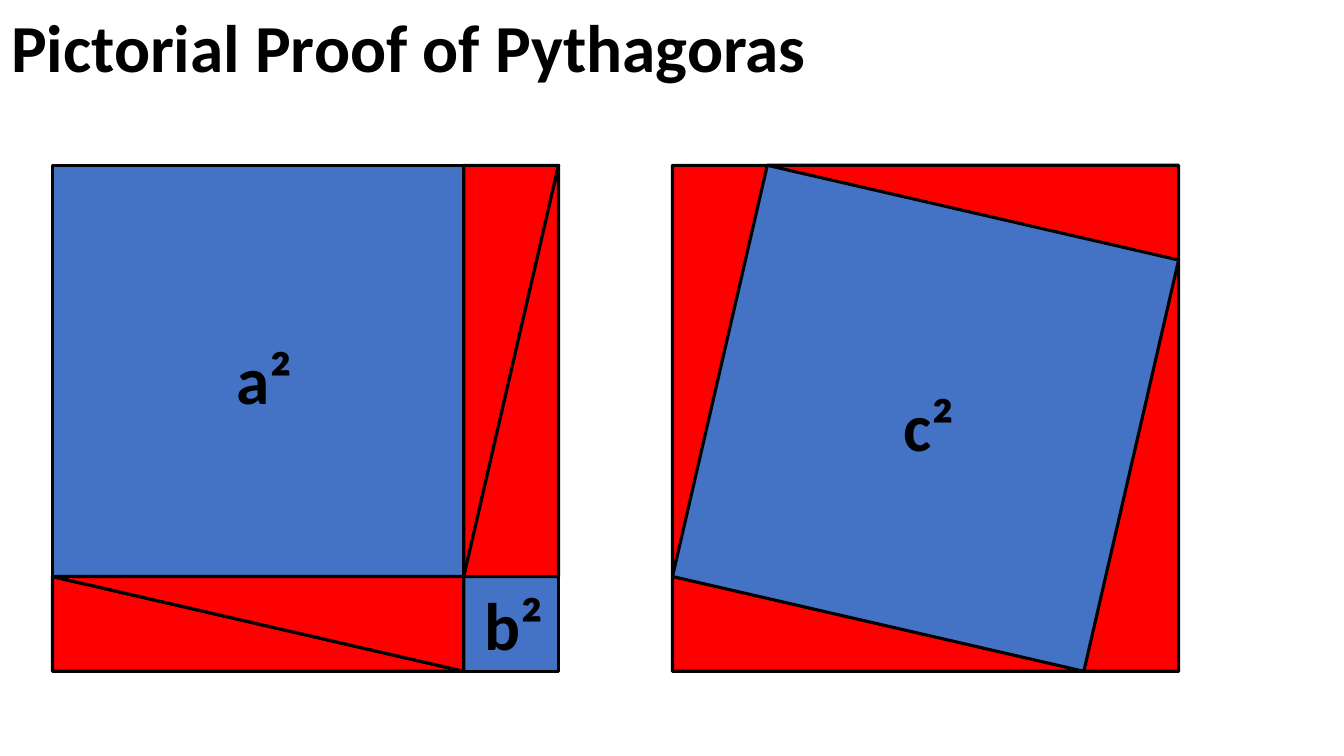
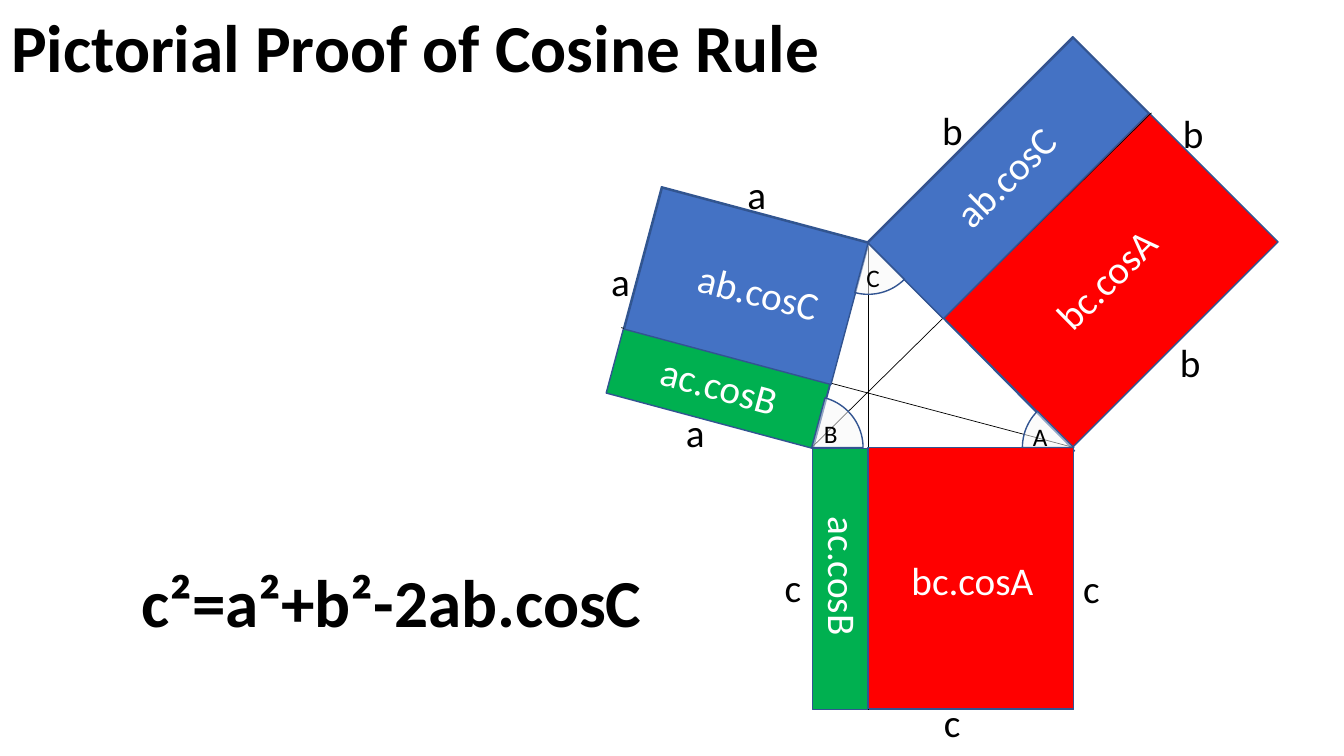
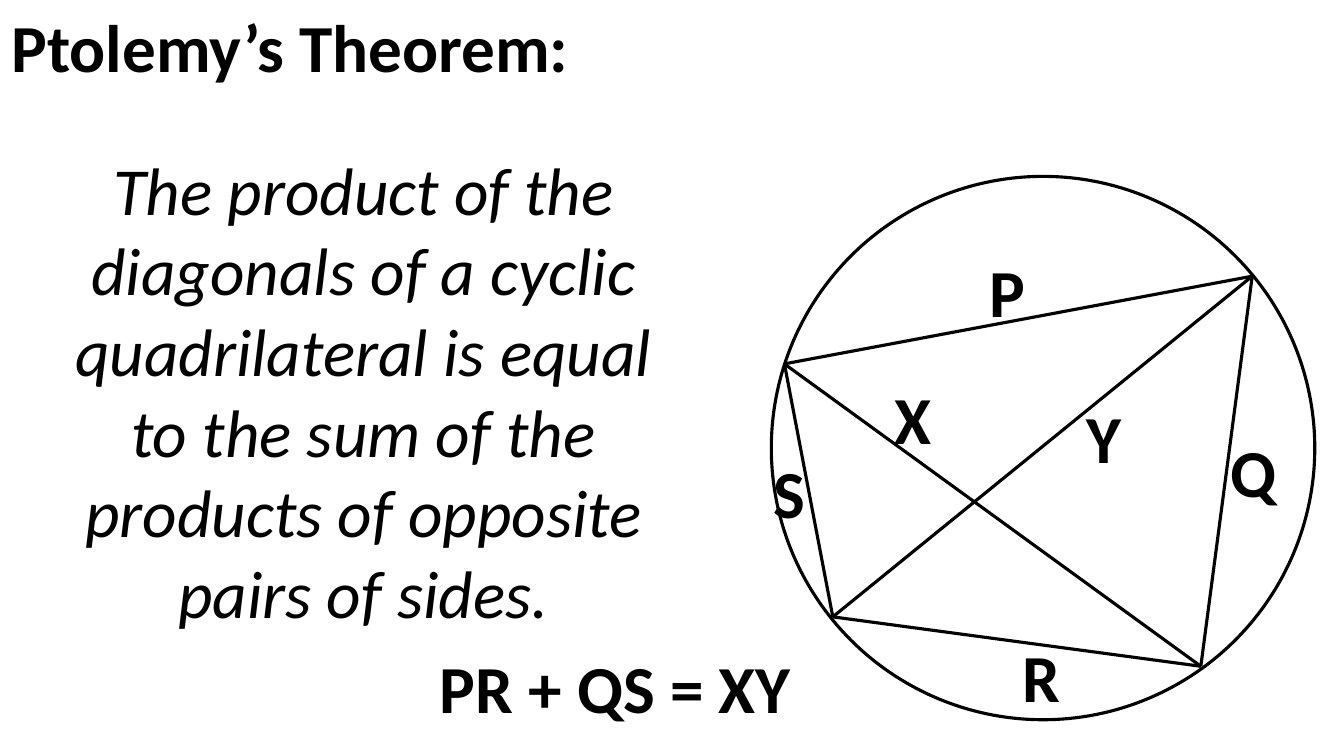
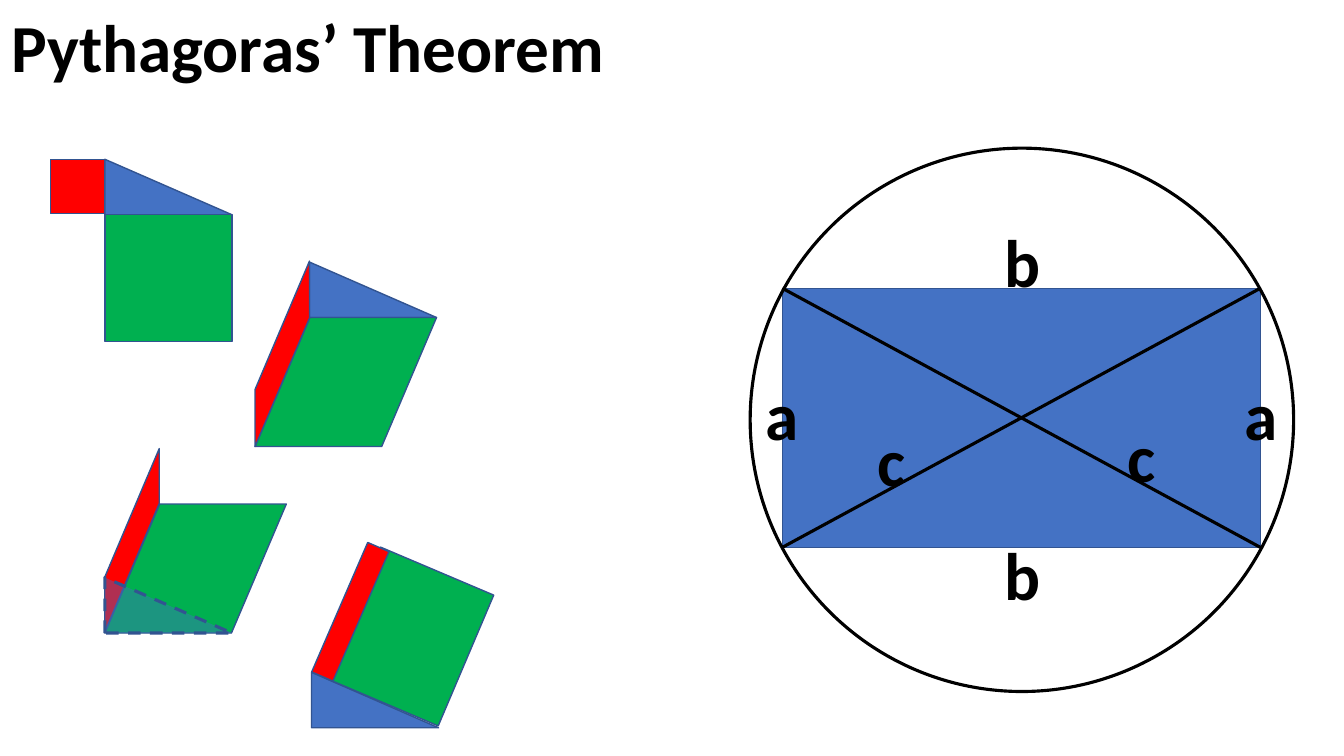
from dataclasses import dataclass
from itertools import combinations

from lxml import etree
from pptx import Presentation
from pptx.dml.color import RGBColor
from pptx.enum import dml, shapes, text
from pptx.oxml.ns import qn
from pptx.util import Inches, Pt

KIND = shapes.MSO_SHAPE


@dataclass(frozen=True)
class Theme:
    font: str = "Calibri"
    black: str = "000000"
    white: str = "FFFFFF"
    blue: str = "4472C4"
    red: str = "FF0000"
    green: str = "00B050"
    outline: str = "325491"
    angle: str = "F8F8F8"
    large: int = 48
    medium: int = 28
    small: int = 18
    thick: float = 2.25
    thin: float = 1
    hairline: float = 0.5


THEME = Theme()
BOX_HEIGHT = {THEME.large: 0.91, THEME.medium: 0.57, THEME.small: 0.4}


def set_attributes(target, values):
    for name, value in values.items():
        setattr(target, name, value)


def set_line(line, color, width):
    line.color.rgb = RGBColor.from_string(color)
    line.width = Pt(width)


def write(shape, content, size, color=THEME.black, bold=False, italic=False,
          align=text.PP_ALIGN.CENTER, wrap=False, fit=text.MSO_AUTO_SIZE.SHAPE_TO_FIT_TEXT):
    frame = shape.text_frame
    set_attributes(frame, {"word_wrap": wrap, "auto_size": fit,
                           "vertical_anchor": text.MSO_ANCHOR.TOP})
    paragraph = frame.paragraphs[0]
    paragraph.alignment = align
    run = paragraph.add_run()
    run.text = content
    set_attributes(run.font, {"name": THEME.font, "size": Pt(size),
                              "bold": bold, "italic": italic})
    run.font.color.rgb = RGBColor.from_string(color)


def add_titled_slide(presentation, title, width):
    slide = presentation.slides.add_slide(presentation.slide_layouts[5])
    set_attributes(slide.shapes.title, {
        "left": Inches(0.01), "top": 0,
        "width": Inches(width), "height": Inches(BOX_HEIGHT[THEME.large])})
    write(slide.shapes.title, title, THEME.large, bold=True,
          align=text.PP_ALIGN.LEFT, fit=text.MSO_AUTO_SIZE.NONE)
    return slide


def add_label(slide, content, left, top, width, size=THEME.large, rotation=0,
              height=None, **style):
    box = slide.shapes.add_textbox(
        Inches(left), Inches(top), Inches(width), Inches(height or BOX_HEIGHT[size]))
    box.rotation = rotation
    write(box, content, size, **style)


def add_figure(container, kind, box, fill=None, line=THEME.outline, width=THEME.thin,
               rotation=0, adjust=(), opacity=None, flip=False):
    """Draw a preset shape on a slide or in a group; box is left, top, width, height."""
    shape = container.shapes.add_shape(kind, *(Inches(value) for value in box))
    shape.shadow.inherit = False
    shape.rotation = rotation
    for index, value in enumerate(adjust):
        shape.adjustments[index] = value
    properties = shape._element.spPr
    if fill:
        shape.fill.solid()
        shape.fill.fore_color.rgb = RGBColor.from_string(fill)
    else:
        shape.fill.background()
    if opacity:
        color = properties.find(qn("a:solidFill"))[0]
        etree.SubElement(color, qn("a:alpha"), val=str(opacity * 1000))
    if flip:
        properties.find(qn("a:xfrm")).set("flipH", "1")
    set_line(shape.line, line, width)
    return shape


def add_segment(slide, start, end, width=THEME.thick):
    connector = slide.shapes.add_connector(
        shapes.MSO_CONNECTOR.STRAIGHT, *(Inches(value) for value in (*start, *end)))
    set_line(connector.line, THEME.black, width)
    etree.SubElement(connector._element.spPr, qn("a:effectLst"))


def add_angle(slide, vertex, start, end):
    """Mark the angle at vertex, with its sides given in degrees clockwise from east."""
    radius = 0.51
    x, y = vertex
    add_figure(slide, KIND.PIE, (x - radius, y - radius, 2 * radius, 2 * radius),
               THEME.angle, adjust=(start * 0.6, end * 0.6), opacity=50)


def build_square_proof(presentation):
    slide = add_titled_slide(presentation, "Pictorial Proof of Pythagoras", 8.17)
    a, b, top = 4.08, 0.94, 1.64
    side = a + b
    far_a, far_b = side - a / 2, side - b / 2
    # Each triangle: centre within the big square, then rotation
    arrangements = {
        0.52: [(a / 2, far_b, 0), (a / 2, far_b, 180), (far_b, a / 2, 90), (far_b, a / 2, 270)],
        6.67: [(a / 2, far_b, 0), (far_a, b / 2, 180), (b / 2, a / 2, 90), (far_b, far_a, 270)],
    }
    outline = {"line": THEME.black, "width": THEME.thick}
    for left, triangles in arrangements.items():
        add_figure(slide, KIND.RECTANGLE, (left, top, side, side), THEME.blue, **outline)
        for x, y, rotation in triangles:
            add_figure(slide, KIND.RIGHT_TRIANGLE, (left + x - a / 2, top + y - b / 2, a, b),
                       THEME.red, rotation=rotation, **outline)
    for label in [("b²", 4.7, 5.74, 0.79), ("a²", 2.23, 3.3, 0.79), ("c²", 8.86, 3.76, 0.71)]:
        add_label(slide, *label, bold=True)


def build_cosine_rule(presentation):
    slide = add_titled_slide(presentation, "Pictorial Proof of Cosine Rule", 8.3)
    corner_a, corner_b, corner_c = (10.65, 4.44), (8.05, 4.44), (8.61, 2.41)
    add_figure(slide, KIND.ISOSCELES_TRIANGLE, (8.49, 2.5, 2.12, 2.51),
               rotation=105, adjust=[0.692])
    squares = [
        ((6.25, 2.09, 2.12, 2.12), THEME.green, 105),
        ((8.06, 4.45, 2.59, 2.59), THEME.green, 0),
        ((9.2, 0.96, 2.88, 2.88), THEME.red, 315),
    ]
    parts = [
        ((6.68, 1.78, 1.45, 2.12), THEME.blue, 105),
        ((8.56, 1.24, 2.88, 1.06), THEME.blue, 315),
        ((8.61, 4.44, 2.04, 2.59), THEME.red, 0),
    ]
    for box, fill, rotation in squares:
        add_figure(slide, KIND.RECTANGLE, box, fill, rotation=rotation)
    for start, end in [((11.42, 1.12), corner_b), ((6.16, 3.25), corner_a),
                       ((8.61, 7.04), corner_c)]:
        add_segment(slide, start, end, THEME.hairline)
    for box, fill, rotation in parts:
        add_figure(slide, KIND.RECTANGLE, box, fill, rotation=rotation)

    sides = {
        "b": (0.41, [(11.6, 3.31), (11.63, 1.04), (9.24, 1.01)]),
        "a": (0.39, [(7.31, 1.64), (5.96, 2.5), (6.7, 4)]),
        "c": (0.37, [(7.68, 5.54), (9.26, 6.88), (10.64, 5.55)]),
    }
    for name, (width, places) in sides.items():
        for left, top in places:
            add_label(slide, name, left, top, width, THEME.medium)
    for content, left, top, width, rotation in [
            ("bc.cosA", 10.25, 2.48, 1.43, 315.4), ("bc.cosA", 8.93, 5.47, 1.43, 0),
            ("ab.cosC", 6.81, 2.61, 1.43, 14.2), ("ab.cosC", 9.25, 1.47, 1.43, 315.4),
            ("ac.cosB", 6.44, 3.54, 1.39, 15.1), ("ac.cosB", 7.67, 5.43, 1.39, 90)]:
        add_label(slide, content, left, top, width, THEME.medium, rotation, color=THEME.white)

    add_angle(slide, corner_c, 45, 105)
    add_angle(slide, corner_b, 285, 0)
    add_angle(slide, corner_a, 180, 225)
    for label in [("B", 8.07, 4.1, 0.34), ("C", 8.49, 2.55, 0.34), ("A", 10.14, 4.13, 0.35)]:
        add_label(slide, *label, THEME.small)
    add_label(slide, "c²=a²+b²-2ab.cosC", 0.73, 5.51, 6.31, bold=True, wrap=True)


def build_ptolemy(presentation):
    slide = add_titled_slide(presentation, "Ptolemy’s Theorem:", 5.78)
    add_figure(slide, KIND.OVAL, (7.65, 1.75, 5.39, 5.39),
               line=THEME.black, width=THEME.thick)
    vertices = [(7.78, 3.61), (12.42, 2.74), (11.91, 6.61), (8.26, 6.12)]
    for start, end in combinations(vertices, 2):
        add_segment(slide, start, end)
    for label in [("P", 9.71, 2.43, 0.56), ("X", 8.77, 3.69, 0.57), ("Y", 10.67, 3.88, 0.55),
                  ("Q", 12.1, 4.22, 0.66), ("R", 10.04, 6.25, 0.58), ("S", 7.57, 4.43, 0.52)]:
        add_label(slide, *label, bold=True)
    add_label(slide, "PR + QS = XY", 2.82, 6.36, 6.57, bold=True, wrap=True)
    add_label(slide, "The product of the diagonals of a cyclic quadrilateral is equal to "
              "the sum of the products of opposite pairs of sides.",
              0.32, 1.42, 6.57, height=4.95, italic=True, wrap=True)


def build_pythagoras(presentation):
    slide = add_titled_slide(presentation, "Pythagoras’ Theorem", 6.15)
    short, long = 0.55, 1.26

    def add_triangle(group, left, top, **style):
        return add_figure(group, KIND.RIGHT_TRIANGLE, (left, top, long, short),
                          THEME.blue, **style)

    def add_sheared_squares(group, green_place, red_place, red_width):
        add_figure(group, KIND.PARALLELOGRAM, (*green_place, 1.8, 1.28),
                   THEME.green, adjust=[0.425])
        add_figure(group, KIND.PARALLELOGRAM, (*red_place, red_width, 0.54),
                   THEME.red, rotation=270, adjust=[2.36], flip=True)

    upright, sheared, moved, turned = (slide.shapes.add_group_shape() for _ in range(4))
    add_triangle(upright, 1.04, 1.58)
    add_figure(upright, KIND.RECTANGLE, (1.04, 2.13, long, long), THEME.green)
    add_figure(upright, KIND.RECTANGLE, (0.5, 1.58, 0.54, 0.54), THEME.red)

    add_triangle(sheared, 3.07, 2.6)
    add_sheared_squares(sheared, (2.53, 3.15), (1.88, 3.24), 1.84)

    add_sheared_squares(moved, (1.04, 5), (0.4, 5.09), 1.82)
    ghost = add_triangle(moved, 1.04, 5.73, width=THEME.thick, opacity=42)
    ghost.line.dash_style = dml.MSO_LINE.DASH

    add_triangle(turned, 3.09, 6.67)
    add_figure(turned, KIND.RECTANGLE, (3.45, 5.61, 1.22, 1.41), THEME.green, rotation=23)
    add_figure(turned, KIND.RECTANGLE, (3.36, 5.37, 0.23, 1.4), THEME.red, rotation=23.4)

    left, top, width, height = rectangle = (7.76, 2.86, 4.74, 2.57)
    right, bottom = left + width, top + height
    add_figure(slide, KIND.RECTANGLE, rectangle, THEME.blue)
    add_figure(slide, KIND.OVAL, (7.44, 1.47, 5.39, 5.39),
               line=THEME.black, width=THEME.thick)
    add_segment(slide, (left, top), (right, bottom))
    add_segment(slide, (left, bottom), (right, top))
    for label in [("b", 9.86, 2.14, 0.56), ("c", 8.6, 4.11, 0.48), ("c", 11.08, 4.07, 0.48),
                  ("a", 12.24, 3.65, 0.54), ("b", 9.86, 5.24, 0.56), ("a", 7.49, 3.65, 0.54)]:
        add_label(slide, *label, bold=True)


def main():
    presentation = Presentation()
    presentation.slide_width = Inches(13.33)
    presentation.slide_height = Inches(7.5)
    for build in (build_square_proof, build_cosine_rule, build_ptolemy, build_pythagoras):
        build(presentation)
    presentation.save("out.pptx")


if __name__ == "__main__":
    main()
